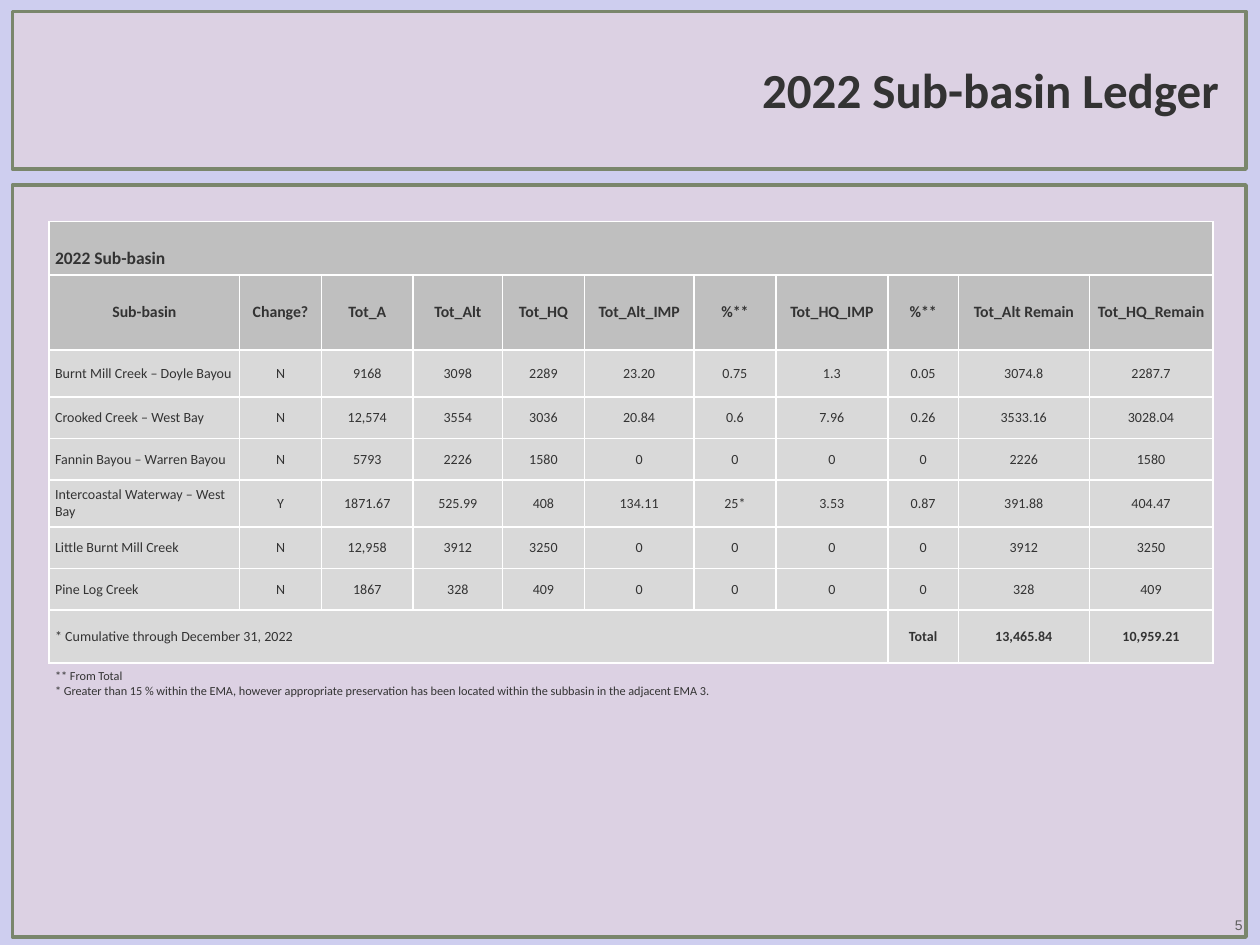
"""Build the 2022 sub-basin ledger slide."""
import dataclasses

import pptx
import pptx.dml.color
import pptx.enum.shapes
import pptx.enum.text
import pptx.oxml
import pptx.oxml.ns
import pptx.util

Cm, Pt = pptx.util.Cm, pptx.util.Pt
Align = pptx.enum.text.PP_ALIGN
Anchor = pptx.enum.text.MSO_ANCHOR

HEADS = ["Sub-basin", "Change?", "Tot_A", "Tot_Alt", "Tot_HQ", "Tot_Alt_IMP", "%**",
         "Tot_HQ_IMP", "%**", "Tot_Alt Remain", "Tot_HQ_Remain"]
BASINS = [
    ["Burnt Mill Creek – Doyle Bayou", "N", "9168", "3098", "2289", "23.20", "0.75",
     "1.3", "0.05", "3074.8", "2287.7"],
    ["Crooked Creek – West Bay", "N", "12,574", "3554", "3036", "20.84", "0.6",
     "7.96", "0.26", "3533.16", "3028.04"],
    ["Fannin Bayou – Warren Bayou", "N", "5793", "2226", "1580", "0", "0",
     "0", "0", "2226", "1580"],
    ["Intercoastal Waterway – West Bay", "Y", "1871.67", "525.99", "408", "134.11", "25*",
     "3.53", "0.87", "391.88", "404.47"],
    ["Little Burnt Mill Creek", "N", "12,958", "3912", "3250", "0", "0",
     "0", "0", "3912", "3250"],
    ["Pine Log Creek", "N", "1867", "328", "409", "0", "0", "0", "0", "328", "409"],
]
TOTALS = ["Total", "13,465.84", "10,959.21"]
NOTES = ["** From Total",
         "* Greater than 15 % within the EMA, however appropriate preservation has been "
         "located within the subbasin in the adjacent EMA 3."]
WIDTHS = [3.84, 1.65, 1.85, 1.8, 1.65, 2.21, 1.65, 2.26, 1.42, 2.64, 2.49]
HEIGHTS = [1.07, 1.52, 0.94, 0.84, 0.84, 0.94, 0.84, 0.84, 1.07, 0.56]


@dataclasses.dataclass(frozen=True)
class Theme:
    """Colours, fonts and type sizes."""
    back: str = "CECEEF"
    panel: str = "DCD1E3"
    edge: str = "7A866C"
    ink: str = "333333"
    faint: str = "5F5F5F"
    head: str = "BFBFBF"
    body: str = "D9D9D9"
    grid: str = "FFFFFF"
    font: str = "Calibri"
    plain: str = "Arial"
    title: int = 28
    band: int = 10
    label: int = 9
    text: int = 8
    note: int = 7


THEME = Theme()


def tint(code):
    """Turn a hex code into a colour."""
    return pptx.dml.color.RGBColor.from_string(code)


def write(frame, text, size=THEME.text, bold=False, align=Align.LEFT,
          color=THEME.ink, font=THEME.font):
    """Fill a text frame, one paragraph for each line."""
    frame.text = text
    for para in frame.paragraphs:
        para.alignment = align
        para.font.size, para.font.bold, para.font.name = Pt(size), bold, font
        para.font.color.rgb = tint(color)


class Deck:
    """Hold the theme and the current slide."""

    def __init__(self, theme):
        """Start a deck with one title-only slide."""
        self.theme = theme
        self.show = pptx.Presentation()
        self.show.slide_width, self.show.slide_height = Cm(25.4), Cm(19.05)
        self.slide = self.show.slides.add_slide(self.show.slide_layouts[5])
        self.shapes = self.slide.shapes
        fill = self.slide.background.fill
        fill.solid()
        fill.fore_color.rgb = tint(theme.back)

    def panel(self, *box):
        """Draw a framed panel."""
        shape = self.shapes.add_shape(pptx.enum.shapes.MSO_SHAPE.RECTANGLE, *map(Cm, box))
        shape.shadow.inherit = False
        shape.fill.solid()
        shape.fill.fore_color.rgb = tint(self.theme.panel)
        shape.line.color.rgb = tint(self.theme.edge)
        shape.line.width = Pt(2)

    def title(self, text, *box):
        """Place the title above the panels."""
        shape = self.shapes.title
        self.shapes._spTree.append(shape._element)
        shape.left, shape.top, shape.width, shape.height = map(Cm, box)
        shape.text_frame.vertical_anchor = Anchor.MIDDLE
        write(shape.text_frame, text, size=self.theme.title, bold=True, align=Align.RIGHT)

    def label(self, text, *box, **style):
        """Add a text box."""
        frame = self.shapes.add_textbox(*map(Cm, box)).text_frame
        frame.word_wrap = True
        write(frame, text, **style)

    def table(self, left, top, widths, heights):
        """Add a bare table with the given columns and rows."""
        size = map(Cm, (left, top, sum(widths), sum(heights)))
        grid = self.shapes.add_table(len(heights), len(widths), *size).table
        grid.first_row = grid.horz_banding = False
        for col, width in zip(grid.columns, widths):
            col.width = Cm(width)
        for row, height in zip(grid.rows, heights):
            row.height = Cm(height)
        return grid

    def cell(self, cell, fill=None, sides="LRTB"):
        """Set the margins, fill and edges of a cell."""
        cell.margin_left = cell.margin_right = Cm(0.12)
        cell.margin_top = cell.margin_bottom = Cm(0.12)
        cell.vertical_anchor = Anchor.MIDDLE
        props = cell._tc.get_or_add_tcPr()
        for side in "LRTB":
            paint = (f'<a:solidFill><a:srgbClr val="{self.theme.grid}"/></a:solidFill>'
                     if side in sides else "<a:noFill/>")
            props.append(pptx.oxml.parse_xml(
                f'<a:ln{side} {pptx.oxml.ns.nsdecls("a")} w="{Pt(1)}">{paint}</a:ln{side}>'))
        if fill:
            cell.fill.solid()
            cell.fill.fore_color.rgb = tint(fill)
        else:
            cell.fill.background()

    def ledger(self, left, top):
        """Add the ledger with its heads, basins, totals and notes."""
        theme = self.theme
        grid = self.table(left, top, WIDTHS, HEIGHTS)
        end, foot = len(WIDTHS) - 1, len(HEIGHTS) - 1
        for row in range(foot):
            for col in range(end + 1):
                self.cell(grid.cell(row, col), theme.head if row < 2 else theme.body)
        for col in range(end + 1):
            self.cell(grid.cell(foot, col), sides="T")
        for row, last in ((0, end), (foot - 1, 7), (foot, end)):
            grid.cell(row, 0).merge(grid.cell(row, last))

        band = grid.cell(0, 0)
        band.vertical_anchor = Anchor.BOTTOM
        write(band.text_frame, "2022 Sub-basin", size=theme.band, bold=True)
        for col, text in enumerate(HEADS):
            write(grid.cell(1, col).text_frame, text, size=theme.label, bold=True,
                  align=Align.CENTER)
        for row, basin in enumerate(BASINS, 2):
            for col, text in enumerate(basin):
                write(grid.cell(row, col).text_frame, text,
                      align=Align.CENTER if col else Align.LEFT)
        write(grid.cell(foot - 1, 0).text_frame, "* Cumulative through December 31, 2022")
        for col, text in enumerate(TOTALS, 8):
            write(grid.cell(foot - 1, col).text_frame, text, bold=True, align=Align.CENTER)
        write(grid.cell(foot, 0).text_frame, "\n".join(NOTES), size=theme.note)


def main():
    """Build and save the slide."""
    deck = Deck(THEME)
    deck.panel(0.25, 3.73, 24.87, 15.16)
    deck.panel(0.25, 0.23, 24.87, 3.18)
    deck.title("2022 Sub-basin Ledger", 1.27, 0.2, 23.55, 3.18)
    deck.label("5", 24.33, 18.36, 0.97, 0.46, align=Align.RIGHT,
               color=THEME.faint, font=THEME.plain)
    deck.ledger(0.99, 4.47)
    deck.show.save("out.pptx")


if __name__ == "__main__":
    main()
